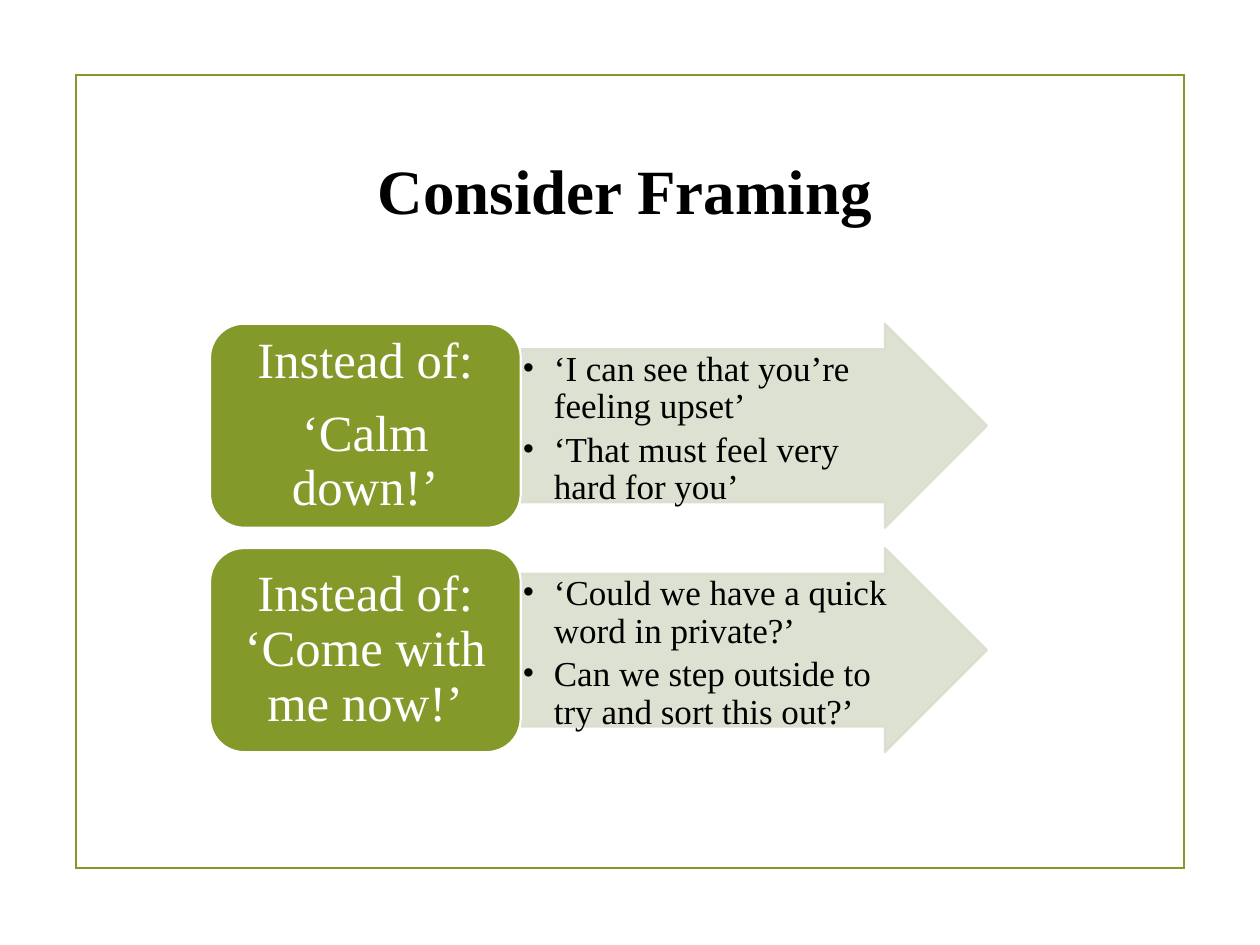
from lxml.etree import SubElement
from pptx import Presentation
from pptx.dml.color import RGBColor
from pptx.enum.shapes import MSO_SHAPE
from pptx.enum.text import MSO_ANCHOR, MSO_AUTO_SIZE, PP_ALIGN
from pptx.oxml.ns import qn
from pptx.util import Pt

GREEN = RGBColor(0x83, 0x99, 0x2A)
PALE_GREEN = RGBColor(0xD9, 0xDE, 0xCD)
WHITE = RGBColor(0xFF, 0xFF, 0xFF)
BLACK = RGBColor(0x00, 0x00, 0x00)
FONT = "Times New Roman"

FIRST_ROW_TOP = 185
ROW_PITCH = 128.2
ROW_HEIGHT = 116.6
LABEL_LEFT, LABEL_WIDTH = 120, 177.6
ARROW_LEFT, ARROW_WIDTH = 297.6, 266.4

ROWS = [
    (["Instead of:", "‘Calm down!’"],
     ["‘I can see that you’re feeling upset’",
      "‘That must feel very hard for you’"]),
    (["Instead of: ‘Come with me now!’"],
     ["‘Could we have a quick word in private?’",
      "Can we step outside to try and sort this out?’"]),
]


def add_block(slide, preset, left, top, width, height, fill, line):
    block = slide.shapes.add_shape(preset, Pt(left), Pt(top), Pt(width), Pt(height))
    block.shadow.inherit = False
    if fill is None:
        block.fill.background()
    else:
        block.fill.solid()
        block.fill.fore_color.rgb = fill
    block.line.color.rgb = line
    block.line.width = Pt(1.25)
    return block


def add_frame(slide):
    """Add the green border with sharp corners."""
    border = add_block(slide, MSO_SHAPE.RECTANGLE, 43.5, 42.8, 633.3, 453.4, None, GREEN)
    outline = border._element.spPr.find(qn("a:ln"))
    SubElement(outline, qn("a:miter"), lim="800000")


def make_translucent(block, percent):
    """Set the opacity of both the fill and the line."""
    for color in block._element.spPr.iter(qn("a:srgbClr")):
        SubElement(color, qn("a:alpha"), val=str(percent * 1000))


def set_insets(frame, horizontal, vertical):
    frame.margin_left = frame.margin_right = Pt(horizontal)
    frame.margin_top = frame.margin_bottom = Pt(vertical)


def add_bullet(para):
    properties = para._p.get_or_add_pPr()
    properties.set("marL", str(Pt(18)))
    properties.set("indent", str(Pt(-18)))
    SubElement(properties, qn("a:buFont"), typeface=FONT)
    SubElement(properties, qn("a:buChar"), char="•")


def write_paragraphs(frame, texts, size, color, align, gap=0, bold=False, bulleted=False):
    frame.word_wrap = True
    for index, text in enumerate(texts):
        para = frame.paragraphs[0] if index == 0 else frame.add_paragraph()
        if bulleted:
            para.level = 1
            add_bullet(para)
        para.alignment = align
        if gap:
            para.line_spacing = 0.9
            para.space_after = Pt(gap)
        span = para.add_run()
        span.text = text
        span.font.name = FONT
        span.font.size = Pt(size)
        span.font.bold = bold
        span.font.color.rgb = color


def add_title(slide, text):
    box = slide.shapes.add_textbox(Pt(121.7), Pt(82.8), Pt(470.9), Pt(51))
    box.text_frame.auto_size = MSO_AUTO_SIZE.SHAPE_TO_FIT_TEXT
    write_paragraphs(box.text_frame, [text], 36, BLACK, PP_ALIGN.CENTER, bold=True)


def add_arrow(slide, top, points):
    arrow = add_block(slide, MSO_SHAPE.RIGHT_ARROW, ARROW_LEFT, top,
                      ARROW_WIDTH, ROW_HEIGHT, PALE_GREEN, PALE_GREEN)
    arrow.adjustments[0], arrow.adjustments[1] = 0.75, 0.5
    make_translucent(arrow, 90)
    frame = arrow.text_frame
    frame.vertical_anchor = MSO_ANCHOR.TOP
    set_insets(frame, 0.9, 0.9)
    write_paragraphs(frame, points, 20, BLACK, PP_ALIGN.LEFT, gap=3.1, bulleted=True)


def add_label(slide, top, lines):
    label = add_block(slide, MSO_SHAPE.ROUNDED_RECTANGLE, LABEL_LEFT, top,
                      LABEL_WIDTH, ROW_HEIGHT, GREEN, WHITE)
    frame = label.text_frame
    frame.vertical_anchor = MSO_ANCHOR.MIDDLE
    set_insets(frame, 8.6, 4.3)
    write_paragraphs(frame, lines, 29, WHITE, PP_ALIGN.CENTER, gap=10.15)


def main():
    deck = Presentation()
    deck.slide_width, deck.slide_height = Pt(720), Pt(540)
    slide = deck.slides.add_slide(deck.slide_layouts[6])
    add_frame(slide)
    add_title(slide, "Consider Framing")
    for index, (lines, points) in enumerate(ROWS):
        top = FIRST_ROW_TOP + index * ROW_PITCH
        add_arrow(slide, top, points)
        add_label(slide, top, lines)
    deck.save("out.pptx")


if __name__ == "__main__":
    main()
